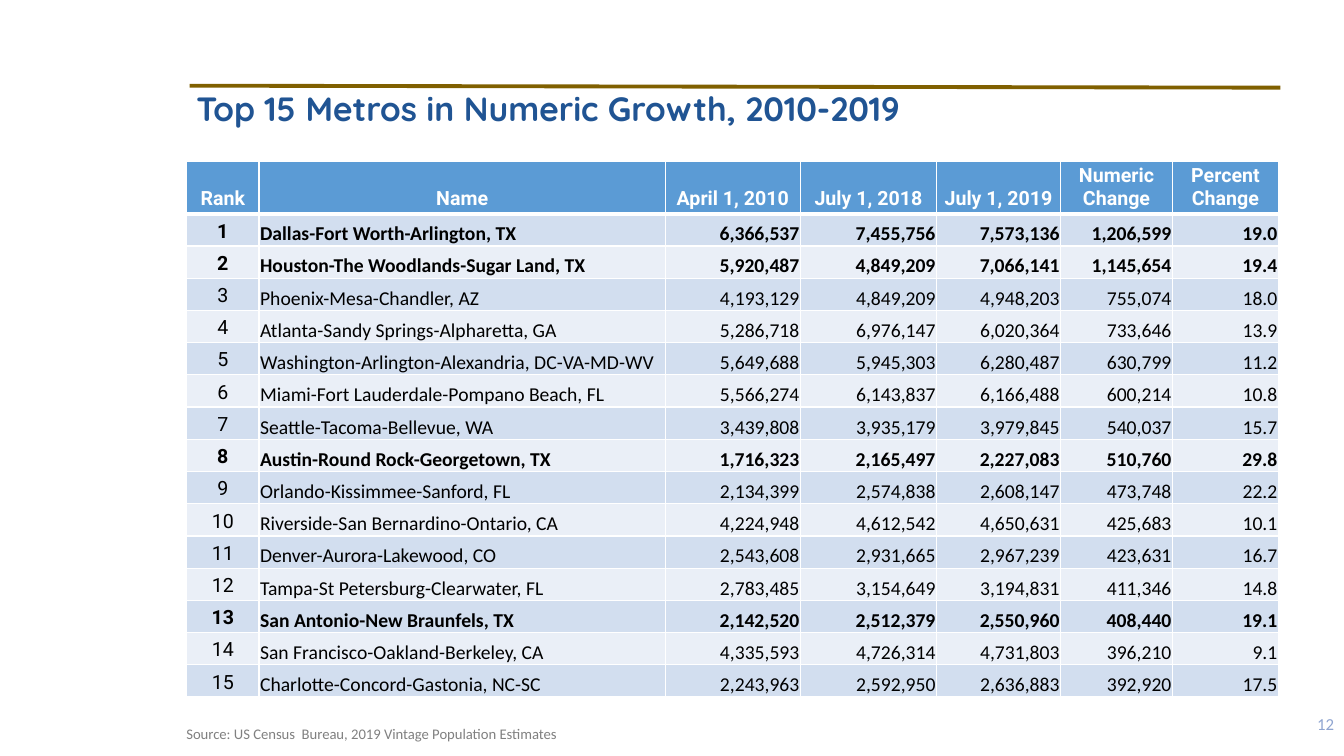
from lxml import etree
from pptx import Presentation
from pptx.dml.color import RGBColor
from pptx.enum.shapes import MSO_CONNECTOR
from pptx.enum.text import MSO_ANCHOR, PP_ALIGN
from pptx.oxml.ns import qn
from pptx.util import Inches, Pt

HUES = {
    "rule": "806000", "title": "205493", "head": "5B9BD5", "odd": "D2DEEF",
    "even": "EAEFF7", "white": "FFFFFF", "black": "000000",
    "note": "808080", "page": "8FA5D1",
}
COLS = [0.72, 4.03, 1.34, 1.35, 1.23, 1.11, 1.05]
HEAD_H, ROW_H = 0.52, 0.32
HEADS = ["Rank", "Name", "April 1, 2010", "July 1, 2018", "July 1, 2019",
         "Numeric Change", "Percent Change"]
METROS = [
    ("Dallas-Fort Worth-Arlington, TX", "6,366,537", "7,455,756", "7,573,136", "1,206,599", "19.0"),
    ("Houston-The Woodlands-Sugar Land, TX", "5,920,487", "4,849,209", "7,066,141", "1,145,654", "19.4"),
    ("Phoenix-Mesa-Chandler, AZ", "4,193,129", "4,849,209", "4,948,203", "755,074", "18.0"),
    ("Atlanta-Sandy Springs-Alpharetta, GA", "5,286,718", "6,976,147", "6,020,364", "733,646", "13.9"),
    ("Washington-Arlington-Alexandria, DC-VA-MD-WV", "5,649,688", "5,945,303", "6,280,487", "630,799", "11.2"),
    ("Miami-Fort Lauderdale-Pompano Beach, FL", "5,566,274", "6,143,837", "6,166,488", "600,214", "10.8"),
    ("Seattle-Tacoma-Bellevue, WA", "3,439,808", "3,935,179", "3,979,845", "540,037", "15.7"),
    ("Austin-Round Rock-Georgetown, TX", "1,716,323", "2,165,497", "2,227,083", "510,760", "29.8"),
    ("Orlando-Kissimmee-Sanford, FL", "2,134,399", "2,574,838", "2,608,147", "473,748", "22.2"),
    ("Riverside-San Bernardino-Ontario, CA", "4,224,948", "4,612,542", "4,650,631", "425,683", "10.1"),
    ("Denver-Aurora-Lakewood, CO", "2,543,608", "2,931,665", "2,967,239", "423,631", "16.7"),
    ("Tampa-St Petersburg-Clearwater, FL", "2,783,485", "3,154,649", "3,194,831", "411,346", "14.8"),
    ("San Antonio-New Braunfels, TX", "2,142,520", "2,512,379", "2,550,960", "408,440", "19.1"),
    ("San Francisco-Oakland-Berkeley, CA", "4,335,593", "4,726,314", "4,731,803", "396,210", "9.1"),
    ("Charlotte-Concord-Gastonia, NC-SC", "2,243,963", "2,592,950", "2,636,883", "392,920", "17.5"),
]


def color(name):
    return RGBColor.from_string(HUES[name])


def write(frame, text, size=14, font="Calibri", hue="black", bold=False,
          align=PP_ALIGN.LEFT, lead=None):
    para = frame.paragraphs[0]
    para.alignment = align
    para.line_spacing = lead
    run = para.add_run()
    run.text = text
    run.font.size = Pt(size)
    run.font.name = font
    run.font.bold = bold
    run.font.color.rgb = color(hue)


def add_text(slide, box, text, anchor=MSO_ANCHOR.TOP, **style):
    frame = slide.shapes.add_textbox(*map(Inches, box)).text_frame
    frame.word_wrap = True
    frame.vertical_anchor = anchor
    write(frame, text, **style)


def add_rule(slide, ends):
    line = slide.shapes.add_connector(MSO_CONNECTOR.STRAIGHT, *map(Inches, ends))
    line.line.color.rgb = color("rule")
    line.line.width = Pt(2.75)
    etree.SubElement(line._element.spPr, qn("a:effectLst"))


def edge(cell, row):
    """Draw white cell borders, thicker between header and body."""
    props = cell._tc.get_or_add_tcPr()
    thick = {(0, "B"), (1, "T")}
    for side in "LRTB":
        width = Pt(3 if (row, side) in thick else 1)
        line = etree.SubElement(props, qn("a:ln" + side), w=str(width))
        fill = etree.SubElement(line, qn("a:solidFill"))
        etree.SubElement(fill, qn("a:srgbClr"), val=HUES["white"])


def fill_cell(cell, row, col, text, bold):
    edge(cell, row)
    cell.fill.solid()
    cell.fill.fore_color.rgb = color("head" if row == 0 else "odd" if row % 2 else "even")
    cell.vertical_anchor = MSO_ANCHOR.BOTTOM
    label = row == 0 or col == 0
    pads = (0.07, 0.03, 0.07, 0.03) if label else (0.01, 0.01, 0.01, 0)
    (cell.margin_left, cell.margin_top,
     cell.margin_right, cell.margin_bottom) = map(Inches, pads)
    if label:
        align = PP_ALIGN.CENTER
    else:
        align = PP_ALIGN.LEFT if col == 1 else PP_ALIGN.RIGHT
    write(cell.text_frame, text, font="Roboto" if label else "Calibri",
          hue="black" if row else "white", bold=bold, align=align)


def add_metros(slide, left, top):
    rows = [HEADS] + [(str(rank), *metro) for rank, metro in enumerate(METROS, 1)]
    high = HEAD_H + ROW_H * len(METROS)
    table = slide.shapes.add_table(
        len(rows), len(COLS), *map(Inches, (left, top, sum(COLS), high))).table
    table.horz_banding = False
    for col, width in enumerate(COLS):
        table.columns[col].width = Inches(width)
    for row, texts in enumerate(rows):
        table.rows[row].height = Inches(ROW_H if row else HEAD_H)
        bold = row == 0 or texts[1].endswith(", TX")
        for col, text in enumerate(texts):
            fill_cell(table.cell(row, col), row, col, text, bold)


def main():
    deck = Presentation()
    deck.slide_width, deck.slide_height = Inches(13.33), Inches(7.5)
    slide = deck.slides.add_slide(deck.slide_layouts[6])
    add_rule(slide, (1.88, 0.85, 12.7, 0.87))
    add_metros(slide, 1.85, 1.6)
    add_text(slide, (12.14, 7.01, 1.19, 0.34), "12", anchor=MSO_ANCHOR.MIDDLE,
             size=12, hue="page", align=PP_ALIGN.RIGHT)
    add_text(slide, (1.75, 7.13, 5, 0.29),
             "Source: US Census  Bureau, 2019 Vintage Population Estimates",
             size=10.5, hue="note", lead=1.07)
    add_text(slide, (1.85, 0.87, 10.82, 6),
             "Top 15 Metros in Numeric Growth, 2010-2019",
             size=24, font="Quicksand", hue="title", bold=True, lead=0.9)
    deck.save("out.pptx")


if __name__ == "__main__":
    main()
